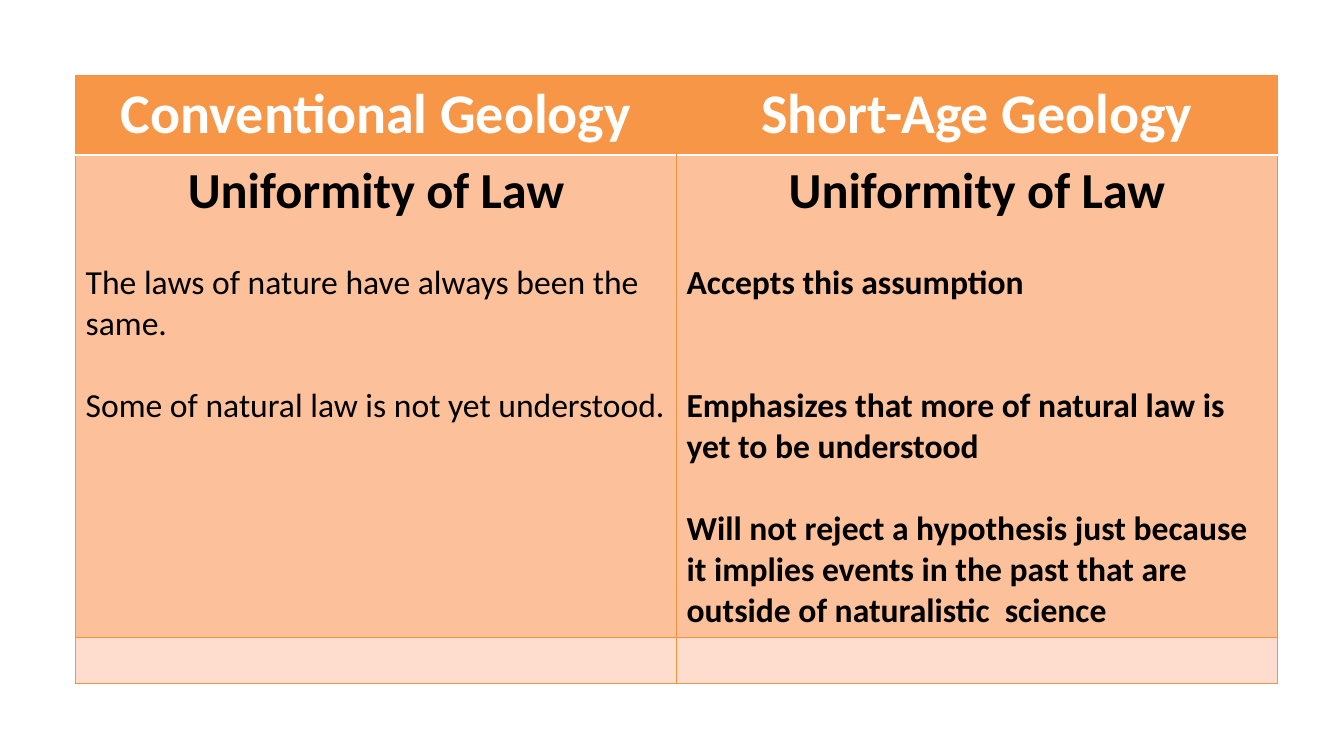
from lxml import etree
from pptx import Presentation, util as u
from pptx.dml.color import RGBColor
from pptx.enum import text
from pptx.oxml import ns

ORANGE = RGBColor(0xF7, 0x96, 0x46)
BORDER = RGBColor(0xF6, 0x92, 0x40)
PEACH = RGBColor(0xFC, 0xC1, 0x9A)
PALE = RGBColor(0xFE, 0xDD, 0xCF)
WHITE = RGBColor(0xFF, 0xFF, 0xFF)
BLACK = RGBColor(0, 0, 0)

LINE = 29.3  # height in points of one line of body text
THIN = (BORDER, 0.75)
RULE = (WHITE, 2)


class ComparisonSlide:
    """Holds the deck's style and its current slide."""

    font = "Calibri"

    def __init__(self, deck):
        self.slide = deck.slides.add_slide(deck.slide_layouts[6])

    def table(self, left, top, widths, heights):
        grid = self.slide.shapes.add_table(
            len(heights), len(widths), u.Inches(left), u.Inches(top),
            u.Inches(sum(widths)), u.Inches(sum(heights))).table
        for column, width in zip(grid.columns, widths):
            column.width = u.Inches(width)
        for row, height in zip(grid.rows, heights):
            row.height = u.Inches(height)
        return grid

    def cell(self, cell, fill, borders):
        """Borders are (colour, points) or None, in order left, right, top, bottom."""
        properties = cell._tc.get_or_add_tcPr()
        for side, border in zip("LRTB", borders):
            line = etree.SubElement(properties, ns.qn(f"a:ln{side}"))
            if border is None:
                etree.SubElement(line, ns.qn("a:noFill"))
                continue
            colour, points = border
            line.set("w", str(u.Pt(points)))
            solid = etree.SubElement(line, ns.qn("a:solidFill"))
            etree.SubElement(solid, ns.qn("a:srgbClr"), val=str(colour))
        cell.fill.solid()
        cell.fill.fore_color.rgb = fill

    def paragraph(self, cell, words, size, colour=BLACK, bold=True,
                  centred=False, lines_before=0):
        frame = cell.text_frame
        first = frame.paragraphs[0]
        paragraph = frame.add_paragraph() if first.runs else first
        paragraph.alignment = (text.PP_ALIGN.CENTER if centred
                               else text.PP_ALIGN.LEFT)
        paragraph.space_before = u.Pt(lines_before * LINE)
        run = paragraph.add_run()
        run.text = words
        run.font.name = self.font
        run.font.size = u.Pt(size)
        run.font.bold = bold
        run.font.color.rgb = colour


def main():
    deck = Presentation()
    deck.slide_width, deck.slide_height = u.Inches(13.33), u.Inches(7.5)
    page = ComparisonSlide(deck)

    # Table grid: header, comparison, empty closing row
    comparison = page.table(0.75, 0.75, [5.96] * 2, [0.79, 4.78, 0.46])
    row_styles = [(ORANGE, THIN, RULE), (PEACH, RULE, THIN), (PALE, THIN, THIN)]
    for row, (fill, above, below) in enumerate(row_styles):
        inner = None if row == 0 else THIN
        page.cell(comparison.cell(row, 0), fill, (THIN, inner, above, below))
        page.cell(comparison.cell(row, 1), fill, (inner, THIN, above, below))

    # Each view: heading, bold body or not, (statement, lines of space before)
    views = [
        ("Conventional Geology", False, [
            ("The laws of nature have always been the same.", 1),
            ("Some of natural law is not yet understood.", 1)]),
        ("Short-Age Geology", True, [
            ("Accepts this assumption", 1),
            ("Emphasizes that more of natural law is yet to be understood", 2),
            ("Will not reject a hypothesis just because it implies events in "
             "the past that are outside of naturalistic  science", 1)]),
    ]
    for column, (heading, bold, statements) in enumerate(views):
        page.paragraph(comparison.cell(0, column), heading, 40, WHITE, centred=True)
        body = comparison.cell(1, column)
        page.paragraph(body, "Uniformity of Law", 36, centred=True)
        for statement, gap in statements:
            page.paragraph(body, statement, 24, bold=bold, lines_before=gap)

    deck.save("out.pptx")


if __name__ == "__main__":
    main()
